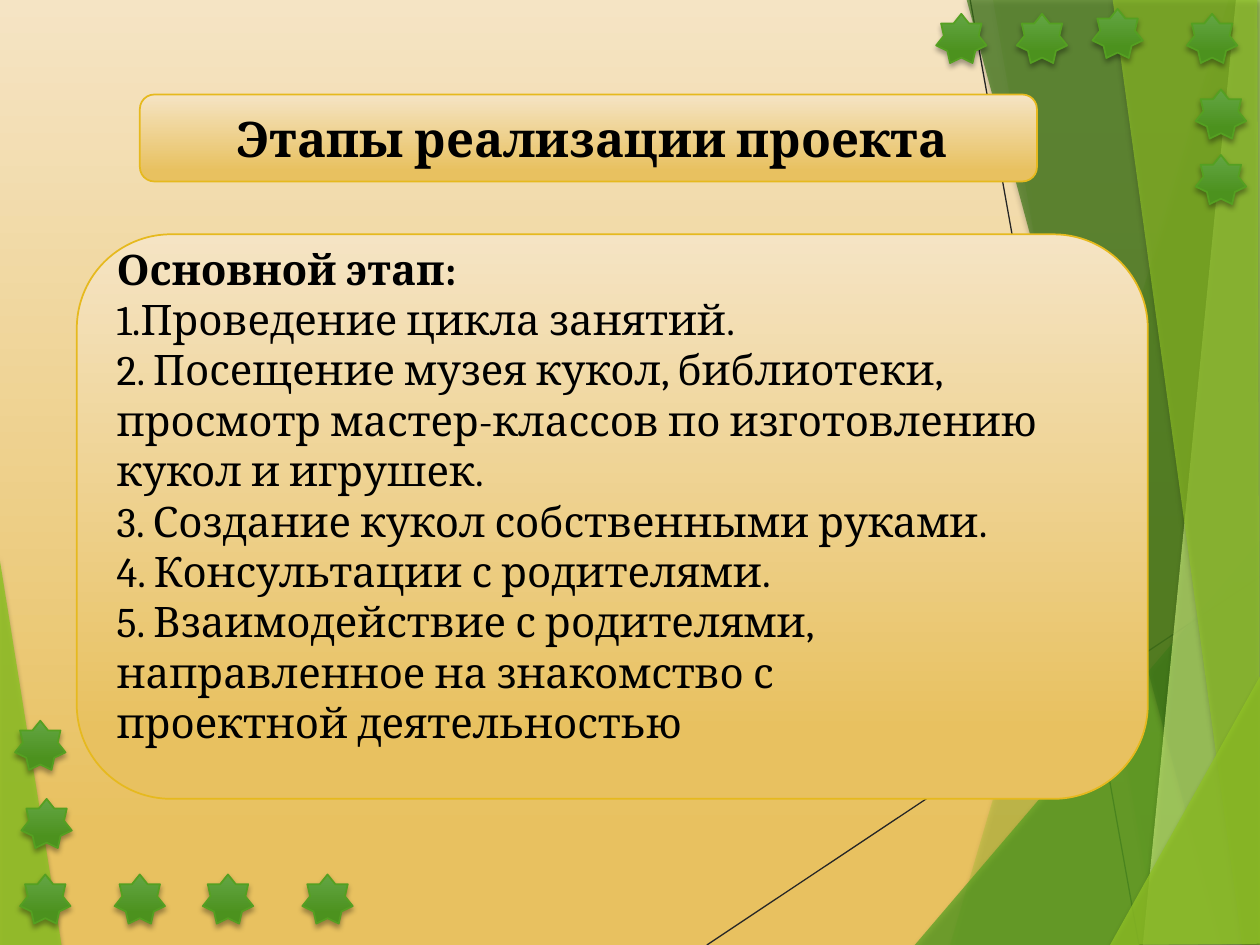
from pptx import Presentation
from pptx.dml.color import RGBColor
from pptx.enum.shapes import MSO_CONNECTOR, MSO_SHAPE as Shape
from pptx.enum.text import MSO_ANCHOR as Anchor, PP_ALIGN as Align
from pptx.oxml.ns import qn
from pptx.util import Inches, Pt
from lxml.etree import SubElement


def color(hex_text):
    return RGBColor.from_string(hex_text)


class SlideBuilder:
    FONT = "Cambria"
    TEXT = "000000"
    SAND = ((0, "F5E4C4"), (0.88, "E8C160"))
    LEAF = ((0, "63A544"), (0.78, "4C921E"))
    SAND_LINE = "E6B91E"
    LEAF_LINE = "54A021"
    STAR_WIDTH, STAR_HEIGHT = 0.4, 0.39

    def __init__(self, slide):
        self.slide = slide
        self.shapes = slide.shapes

    def gradient(self, fill, stops):
        fill.gradient()
        fill.gradient_angle = 270
        for stop, (position, hex_text) in zip(fill.gradient_stops, stops):
            stop.position = position
            stop.color.rgb = color(hex_text)

    def alpha(self, color_element, percent):
        SubElement(color_element, qn("a:alpha"), val=str(percent * 1000))

    def shadow(self, shape):
        shape.shadow.inherit = False
        effects = shape._element.spPr.find(qn("a:effectLst"))
        outer = SubElement(effects, qn("a:outerShdw"), blurRad=str(Pt(3)),
                           dist=str(Pt(2)), dir="5400000", rotWithShape="0")
        self.alpha(SubElement(outer, qn("a:srgbClr"), val="000000"), 35)

    def line(self, x1, y1, x2, y2):
        line = self.shapes.add_connector(MSO_CONNECTOR.STRAIGHT, Inches(x1),
                                         Inches(y1), Inches(x2), Inches(y2))
        line.line.color.rgb = color("262626")
        line.line.width = Pt(0.75)
        SubElement(line._element.spPr, qn("a:effectLst"))

    def facet(self, hex_text, opacity, points):
        start, *rest = [(Inches(x), Inches(y)) for x, y in points]
        builder = self.shapes.build_freeform(*start)
        builder.add_line_segments(rest, close=True)
        shape = builder.convert_to_shape()
        shape.fill.solid()
        shape.fill.fore_color.rgb = color(hex_text)
        self.alpha(shape._element.spPr.find(".//" + qn("a:srgbClr")), opacity)
        shape.line.fill.background()
        self.shadow(shape)

    def gradient_shape(self, kind, left, top, width, height, stops, outline):
        shape = self.shapes.add_shape(kind, Inches(left), Inches(top),
                                      Inches(width), Inches(height))
        shape.shadow.inherit = False
        self.gradient(shape.fill, stops)
        shape.line.color.rgb = color(outline)
        shape.line.width = Pt(1)
        return shape

    def star(self, left, top):
        star = self.gradient_shape(Shape.STAR_7_POINT, left, top, self.STAR_WIDTH,
                                   self.STAR_HEIGHT, self.LEAF, self.LEAF_LINE)
        self.shadow(star)

    def panel(self, left, top, width, height, lines, size, align, margins):
        shape = self.gradient_shape(Shape.ROUNDED_RECTANGLE, left, top, width,
                                    height, self.SAND, self.SAND_LINE)
        frame = shape.text_frame
        frame.word_wrap = True
        frame.vertical_anchor = Anchor.MIDDLE
        (frame.margin_left, frame.margin_top,
         frame.margin_right, frame.margin_bottom) = map(Inches, margins)
        frame.text = "\n".join(lines)
        for index, paragraph in enumerate(frame.paragraphs):
            paragraph.alignment = align
            for run in paragraph.runs:
                run.font.name = self.FONT
                run.font.size = Pt(size)
                run.font.bold = index == 0
                run.font.color.rgb = color(self.TEXT)


LINES = [(5.61, 7.5, 10.01, 4.57), (7.7, 0, 9.04, 7.5)]

# Colour, opacity in percent, corner points
FACETS = [
    ("90C226", 85, [(-0.01, 4.39), (0.49, 7.51), (-0.01, 7.5)]),
    ("90C226", 30, [(9.75, 0), (7.54, 7.5), (10.02, 7.51), (10.01, 0.01)]),
    ("90C226", 20, [(7.88, -0.01), (9.19, 7.5), (10.01, 7.5), (10.01, -0.01)]),
    ("54A021", 72, [(7.26, 7.5), (10, 4.29), (10.01, 7.5)]),
    ("3F7819", 70, [(7.67, -0.01), (9.7, 7.5), (10.01, 7.49), (10.01, -0.01)]),
    ("C0E474", 70, [(9.81, -0.01), (9.07, 7.5), (10.01, 7.5), (10, -0.01)]),
    ("90C226", 65, [(8.83, -0.01), (9.86, 7.5), (10, 7.5), (9.98, -0.01)]),
    ("90C226", 80, [(8.81, 7.5), (10.01, 5.35), (10.01, 7.49)]),
]

STARS = [
    (7.43, 0.11), (8.07, 0.11), (9.49, 1.23), (8.67, 0.07), (9.49, 0.71), (9.42, 0.11),
    (1.61, 6.94), (0.91, 6.94), (0.17, 6.34), (0.16, 6.94), (2.4, 6.94), (0.12, 5.72),
]

STAGE = [
    "Основной этап:",
    "1.Проведение цикла занятий.",
    "2. Посещение музея кукол, библиотеки, просмотр мастер-классов "
    "по изготовлению кукол и игрушек.",
    "3. Создание кукол собственными руками.",
    "4. Консультации с родителями.",
    "5. Взаимодействие с родителями, направленное на знакомство с",
    "проектной деятельностью",
]


def main():
    presentation = Presentation()
    presentation.slide_width = Inches(10)
    presentation.slide_height = Inches(7.5)
    slide = presentation.slides.add_slide(presentation.slide_layouts[6])
    builder = SlideBuilder(slide)

    # Background with lines and translucent facets
    builder.gradient(slide.background.fill, builder.SAND)
    for ends in LINES:
        builder.line(*ends)
    for facet in FACETS:
        builder.facet(*facet)

    # Corner stars
    for position in STARS:
        builder.star(*position)

    # Title and stage description
    builder.panel(1.11, 0.75, 7.12, 0.69, ["Этапы реализации проекта"], 28,
                  Align.CENTER, (0.16, 0.05, 0.1, 0.05))
    builder.panel(0.61, 1.86, 8.5, 4.48, STAGE, 24,
                  Align.LEFT, (0.1, 0, 0.1, 0.34))

    presentation.save("out.pptx")


if __name__ == "__main__":
    main()
